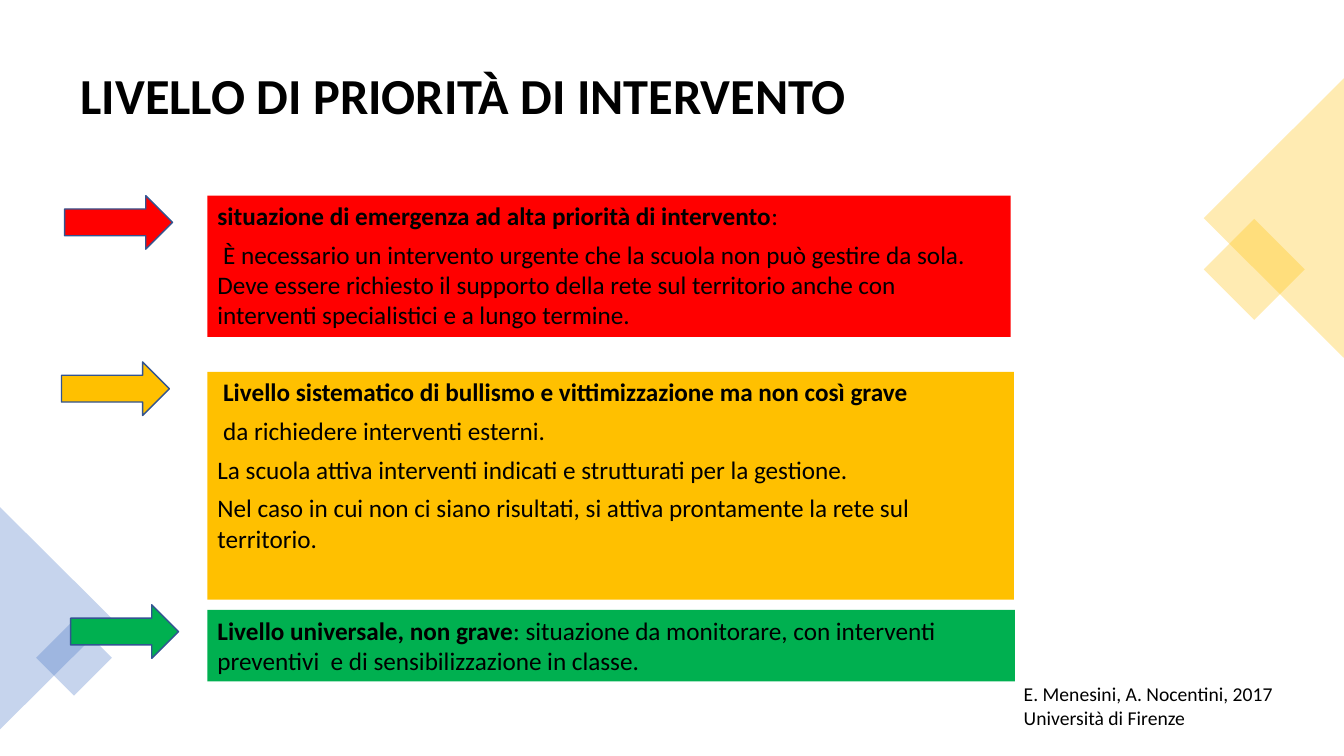
from dataclasses import dataclass

from lxml import etree
from pptx import Presentation
from pptx.dml.color import RGBColor
from pptx.enum.shapes import MSO_SHAPE
from pptx.enum.text import MSO_ANCHOR, PP_ALIGN
from pptx.oxml.ns import qn
from pptx.shapes.autoshape import Shape
from pptx.slide import Slide
from pptx.text.text import _Run
from pptx.util import Cm, Pt

RECTANGLE = MSO_SHAPE.RECTANGLE
TRIANGLE = MSO_SHAPE.ISOSCELES_TRIANGLE
ARROW = MSO_SHAPE.RIGHT_ARROW
LEFT = PP_ALIGN.LEFT
TOP, MIDDLE = MSO_ANCHOR.TOP, MSO_ANCHOR.MIDDLE

FONT = "Calibri"
BLACK, RED, AMBER, GREEN = "000000", "FF0000", "FFC000", "00B050"
BLUE, ARROW_EDGE = "4472C4", "325491"
DECOR_OPACITY = 30
ARROW_WIDTH, ARROW_HEIGHT = 2.72, 1.35
PANEL_LEFT = 5.23


@dataclass(frozen=True)
class Decor:
    kind: MSO_SHAPE
    left: float
    top: float
    width: float
    height: float
    rotation: int
    color: str


@dataclass(frozen=True)
class Level:
    """One priority level; each paragraph is a (bold part, plain part) pair."""
    color: str
    arrow_left: float
    arrow_top: float
    top: float
    width: float
    height: float
    paragraphs: tuple[tuple[str, str], ...]


DECORS = (
    Decor(RECTANGLE, 30.71, 5.89, 1.8, 1.8, 45, AMBER),
    Decor(TRIANGLE, 28.58, 3.73, 7.04, 3.53, 270, AMBER),
    Decor(TRIANGLE, -1.4, 14.17, 5.61, 2.82, 90, BLUE),
    Decor(RECTANGLE, 1.19, 15.9, 1.35, 1.35, 45, BLUE),
)

LEVELS = (
    Level(RED, 1.63, 4.93, 4.93, 20.24, 3.56, (
        ("situazione di emergenza ad alta priorità di intervento", ":"),
        ("", " È necessario un intervento urgente che la scuola non può gestire da sola. "
             "Deve essere richiesto il supporto della rete sul territorio anche con "
             "interventi specialistici e a lungo termine."),
    )),
    Level(AMBER, 1.55, 9.12, 9.37, 20.32, 5.74, (
        (" Livello sistematico di bullismo e vittimizzazione ma non così grave", ""),
        ("", " da richiedere interventi esterni."),
        ("", "La scuola attiva interventi indicati e strutturati per la gestione."),
        ("", "Nel caso in cui non ci siano risultati, si attiva prontamente la rete "
             "sul territorio."),
    )),
    Level(GREEN, 1.78, 15.24, 15.37, 20.35, 1.8, (
        ("Livello universale, non grave",
         ": situazione da monitorare, con interventi preventivi  e di "
         "sensibilizzazione in classe."),
    )),
)


def rgb(color: str) -> RGBColor:
    return RGBColor.from_string(color)


def style_run(run: _Run, size: int, bold: bool = False) -> None:
    run.font.name = FONT
    run.font.size = Pt(size)
    run.font.bold = bold
    run.font.color.rgb = rgb(BLACK)


def add_filled(slide: Slide, kind: MSO_SHAPE, left: float, top: float,
               width: float, height: float, color: str) -> Shape:
    """Add a flat shape without outline; lengths are in centimetres."""
    shape = slide.shapes.add_shape(kind, Cm(left), Cm(top), Cm(width), Cm(height))
    shape.shadow.inherit = False
    shape.fill.solid()
    shape.fill.fore_color.rgb = rgb(color)
    shape.line.fill.background()
    return shape


def add_decor(slide: Slide, decor: Decor) -> None:
    shape = add_filled(slide, decor.kind, decor.left, decor.top,
                       decor.width, decor.height, decor.color)
    shape.rotation = decor.rotation
    fill_color = shape.fill._xPr.find(qn("a:solidFill"))[0]
    etree.SubElement(fill_color, qn("a:alpha"), val=str(DECOR_OPACITY * 1000))


def add_level(slide: Slide, level: Level) -> None:
    arrow = add_filled(slide, ARROW, level.arrow_left, level.arrow_top,
                       ARROW_WIDTH, ARROW_HEIGHT, level.color)
    arrow.line.color.rgb = rgb(ARROW_EDGE)
    arrow.line.width = Pt(1)

    panel = add_filled(slide, RECTANGLE, PANEL_LEFT, level.top,
                       level.width, level.height, level.color)
    frame = panel.text_frame
    frame.word_wrap = True
    frame.vertical_anchor = TOP
    for index, parts in enumerate(level.paragraphs):
        paragraph = frame.add_paragraph() if index else frame.paragraphs[0]
        paragraph.alignment = LEFT
        paragraph.space_after = Pt(6)
        for text, bold in zip(parts, (True, False)):
            if text:
                run = paragraph.add_run()
                run.text = text
                style_run(run, 18, bold)


def add_title(slide: Slide, text: str) -> None:
    title = slide.shapes.title
    title.left, title.top, title.width, title.height = Cm(1.78), Cm(0.89), Cm(30.3), Cm(3.15)
    title.text_frame.text = text
    title.text_frame.vertical_anchor = MIDDLE
    heading = title.text_frame.paragraphs[0]
    heading.alignment = LEFT
    heading.line_spacing = 0.9
    style_run(heading.runs[0], 36, True)


def add_credit(slide: Slide, text: str) -> None:
    credit = slide.shapes.add_textbox(Cm(25.55), Cm(17.07), Cm(7.39), Cm(1.45))
    credit.text_frame.word_wrap = True
    credit.text_frame.text = text
    for paragraph in credit.text_frame.paragraphs:
        style_run(paragraph.runs[0], 14)


def main() -> None:
    deck = Presentation()
    deck.slide_width, deck.slide_height = Cm(33.87), Cm(19.05)
    slide = deck.slides.add_slide(deck.slide_layouts.get_by_name("Title Only"))
    add_title(slide, "LIVELLO DI PRIORITÀ DI INTERVENTO")
    for decor in DECORS:
        add_decor(slide, decor)
    for level in LEVELS:
        add_level(slide, level)
    add_credit(slide, "E. Menesini, A. Nocentini, 2017\nUniversità di Firenze")
    deck.save("out.pptx")


if __name__ == "__main__":
    main()
